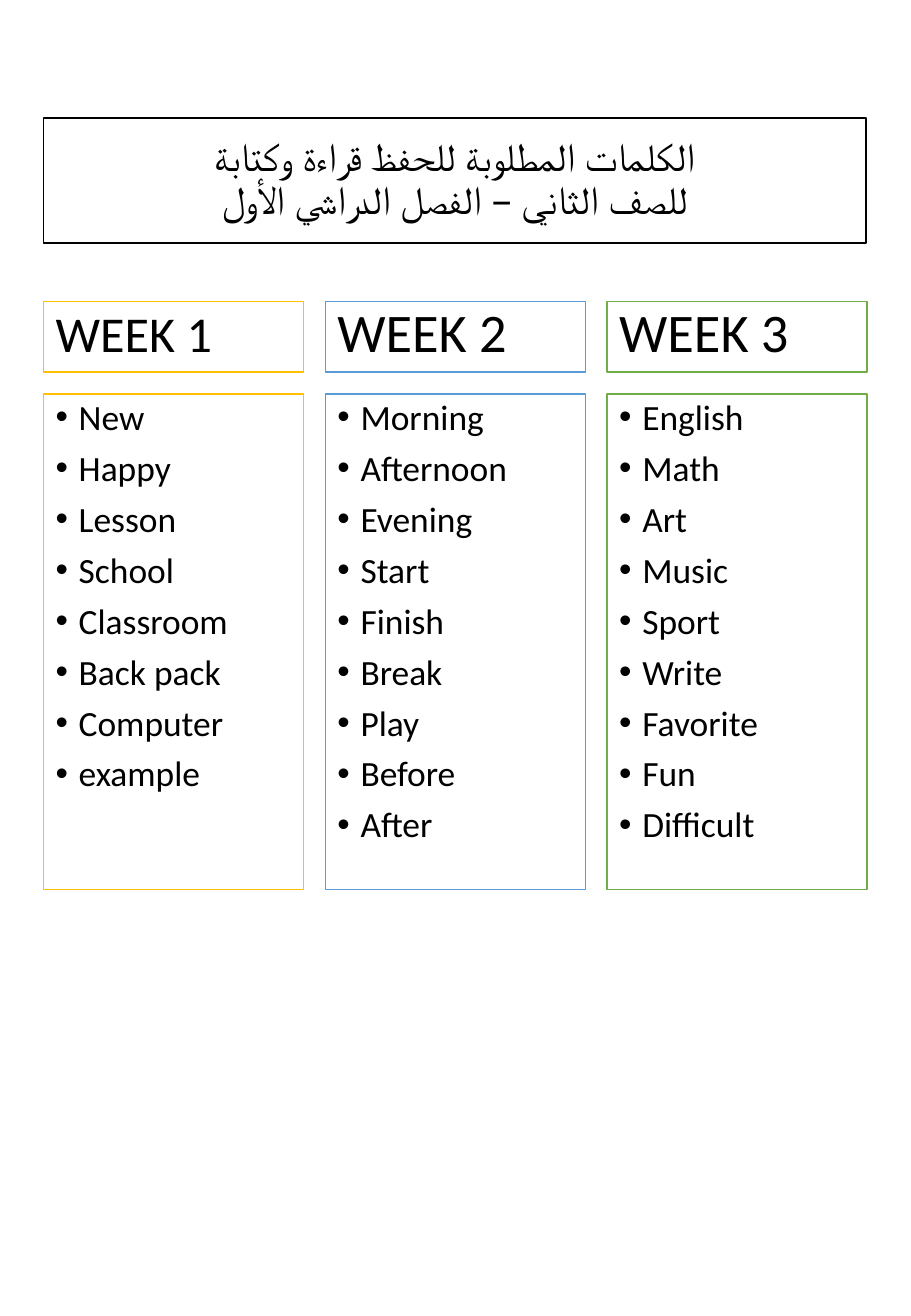
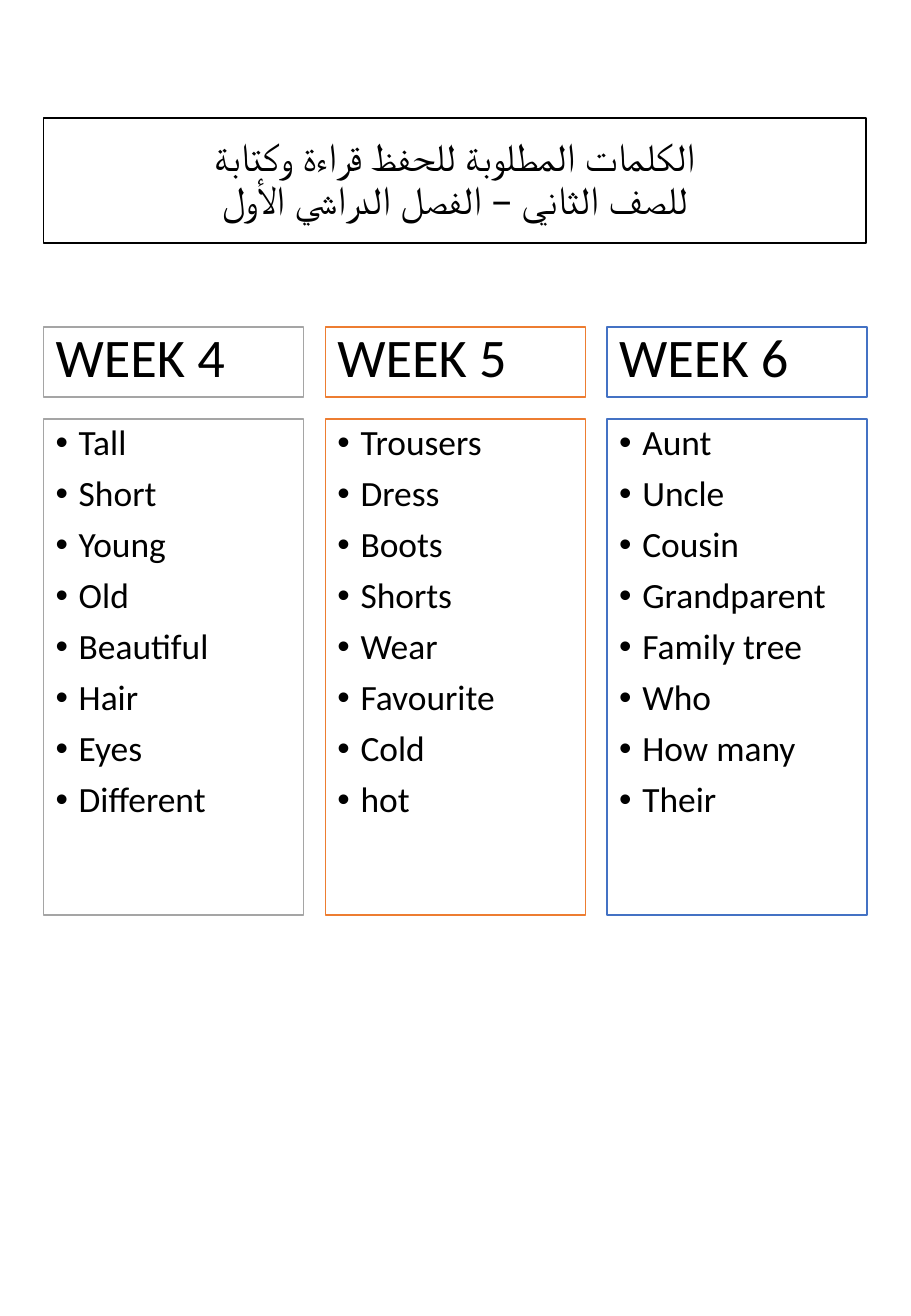
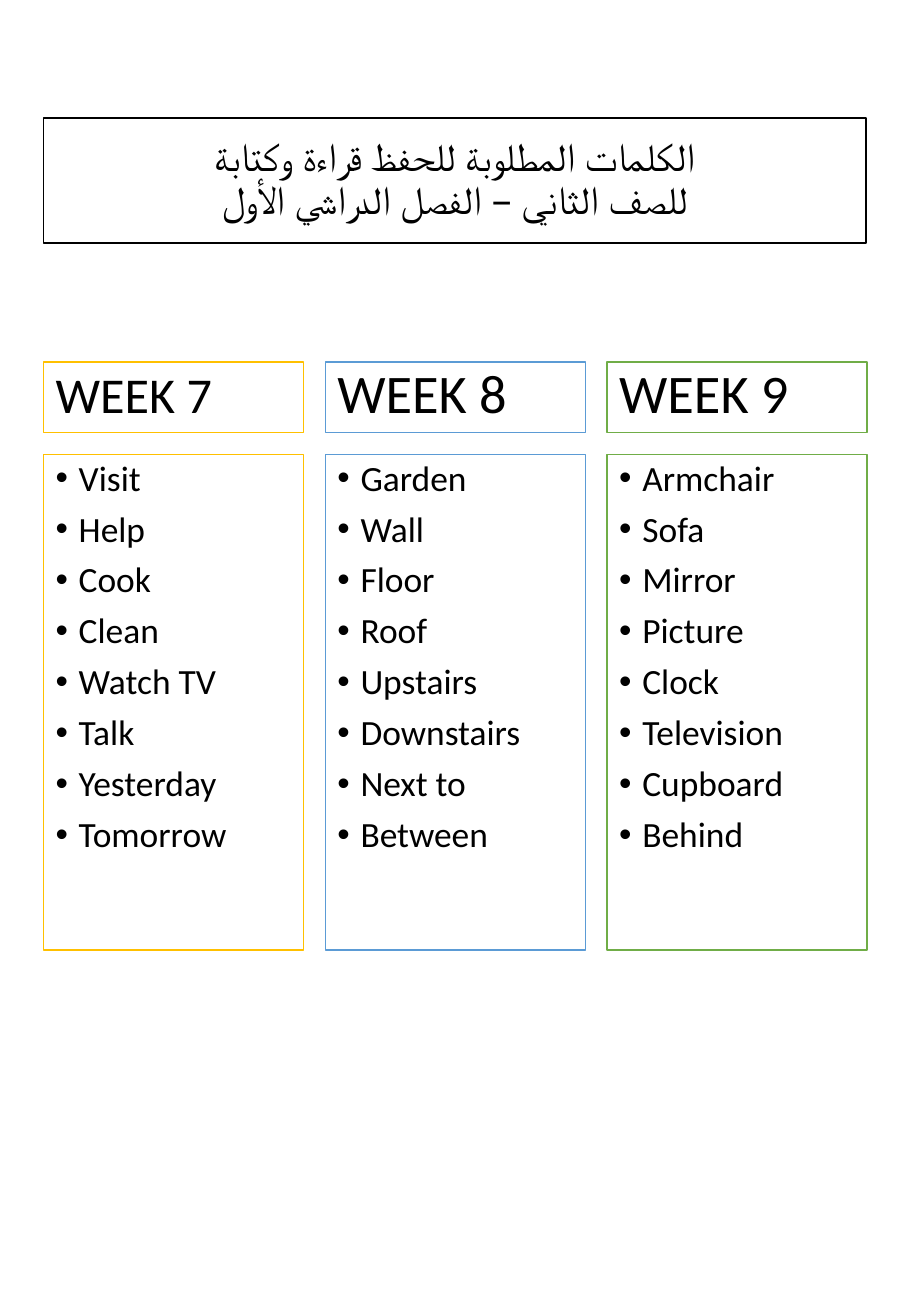
from lxml.etree import SubElement
from pptx import Presentation
from pptx.dml.color import RGBColor
from pptx.enum.shapes import MSO_SHAPE
from pptx.enum.text import MSO_ANCHOR, PP_ALIGN
from pptx.oxml.ns import qn
from pptx.util import Pt

PX = 9144  # 100 px to the inch

# Colours
BLACK = RGBColor(0x00, 0x00, 0x00)
WHITE = RGBColor(0xFF, 0xFF, 0xFF)
GOLD = RGBColor(0xFF, 0xC0, 0x00)
SKY = RGBColor(0x5B, 0x9B, 0xD5)
GREEN = RGBColor(0x70, 0xAD, 0x47)
GRAY = RGBColor(0xA5, 0xA5, 0xA5)
ORANGE = RGBColor(0xED, 0x7D, 0x31)
BLUE = RGBColor(0x44, 0x72, 0xC4)

# Shared grid
LEFT, COL_W, COL_STEP = 36, 214, 232
BANNER_TOP, BANNER_W, BANNER_H = 97, 677, 103
HEAD_H, LIST_OFFSET, LIST_H = 58, 76, 408
INDENT = 19

# Text styles: font size, then paragraph formats
BANNER = (23.4, {"alignment": PP_ALIGN.CENTER, "line_spacing": 0.9})
HEAD = (32.2, {"alignment": PP_ALIGN.LEFT, "line_spacing": 0.8})
HEAD_SMALL = (29.7, {"alignment": PP_ALIGN.LEFT, "line_spacing": 0.9})
WORDS = (21, {"alignment": PP_ALIGN.LEFT, "line_spacing": 0.9, "space_before": Pt(7.5)})

TITLE = ["الكلمات المطلوبة للحفظ قراءة وكتابة", "للصف الثاني – الفصل الدراسي الأول"]

# Each slide: top of the week headings, then heading style, colour and words by week
SLIDES = [
    (248, [
        (HEAD_SMALL, GOLD, ["New", "Happy", "Lesson", "School", "Classroom",
                            "Back pack", "Computer", "example"]),
        (HEAD, SKY, ["Morning", "Afternoon", "Evening", "Start", "Finish",
                     "Break", "Play", "Before", "After"]),
        (HEAD, GREEN, ["English", "Math", "Art", "Music", "Sport",
                       "Write", "Favorite", "Fun", "Difficult"]),
    ]),
    (269, [
        (HEAD, GRAY, ["Tall", "Short", "Young", "Old", "Beautiful",
                      "Hair", "Eyes", "Different"]),
        (HEAD, ORANGE, ["Trousers", "Dress", "Boots", "Shorts", "Wear",
                        "Favourite", "Cold", "hot"]),
        (HEAD, BLUE, ["Aunt", "Uncle", "Cousin", "Grandparent", "Family tree",
                      "Who", "How many", "Their"]),
    ]),
    (298, [
        (HEAD_SMALL, GOLD, ["Visit", "Help", "Cook", "Clean", "Watch TV",
                            "Talk", "Yesterday", "Tomorrow"]),
        (HEAD, SKY, ["Garden", "Wall", "Floor", "Roof", "Upstairs",
                     "Downstairs", "Next to", "Between"]),
        (HEAD, GREEN, ["Armchair", "Sofa", "Mirror", "Picture", "Clock",
                       "Television", "Cupboard", "Behind"]),
    ]),
]


def add_box(s, box, color, lines, style, anchor=MSO_ANCHOR.MIDDLE):
    """Add an outlined white box with one paragraph per line of text."""
    sp = s.shapes.add_shape(MSO_SHAPE.RECTANGLE, *(v * PX for v in box))
    sp.shadow.inherit = False
    sp.fill.solid()
    sp.fill.fore_color.rgb = WHITE
    sp.line.color.rgb = color
    sp.line.width = Pt(1)
    tf = sp.text_frame
    tf.word_wrap = True
    tf.vertical_anchor = anchor
    size, formats = style
    for i, text in enumerate(lines):
        p = tf.paragraphs[0] if i == 0 else tf.add_paragraph()
        for name, value in formats.items():
            setattr(p, name, value)
        r = p.add_run()
        r.text = text
        for name, value in {"name": "Calibri", "size": Pt(size)}.items():
            setattr(r.font, name, value)
        r.font.color.rgb = BLACK
    return tf


def add_bullets(tf):
    """Give every paragraph a hanging bullet."""
    for p in tf.paragraphs:
        pPr = p._p.get_or_add_pPr()
        pPr.set("marL", str(INDENT * PX))
        pPr.set("indent", str(-INDENT * PX))
        SubElement(pPr, qn("a:buFont"), typeface="Arial")
        SubElement(pPr, qn("a:buChar"), char="•")


prs = Presentation()
prs.slide_width, prs.slide_height = 750 * PX, 1083 * PX

week = 1
for top, columns in SLIDES:
    s = prs.slides.add_slide(prs.slide_layouts[6])

    # Banner, read from right to left
    tf = add_box(s, (LEFT, BANNER_TOP, BANNER_W, BANNER_H), BLACK, TITLE, BANNER)
    for p in tf.paragraphs:
        p._p.get_or_add_pPr().set("rtl", "1")

    # Week headings and word lists
    for col, (head_style, color, words) in enumerate(columns):
        x = LEFT + col * COL_STEP
        add_box(s, (x, top, COL_W, HEAD_H), color, [f"WEEK {week}"], head_style)
        add_bullets(add_box(s, (x, top + LIST_OFFSET, COL_W, LIST_H), color,
                            words, WORDS, MSO_ANCHOR.TOP))
        week += 1

prs.save("out.pptx")
